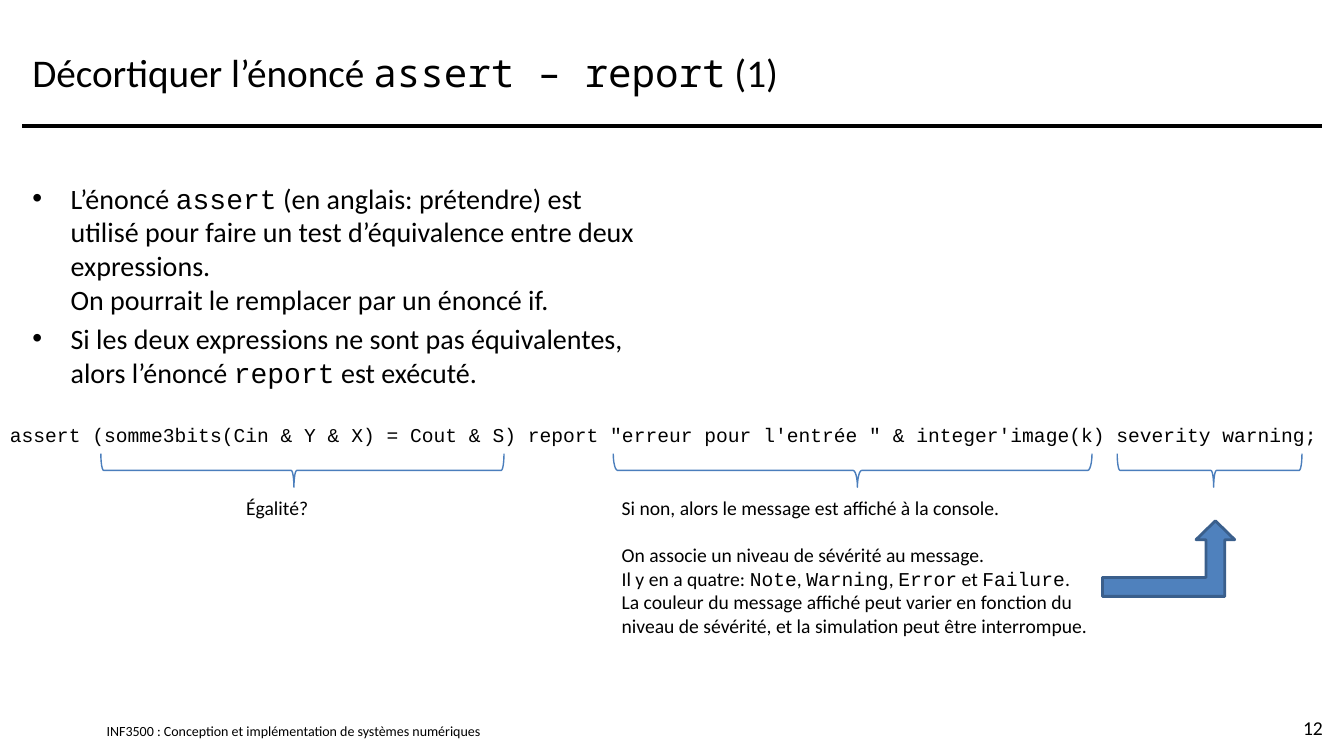
"""Build the slide that explains the VHDL assert – report statement."""
from dataclasses import dataclass

from lxml.etree import SubElement
from pptx import Presentation
from pptx.dml.color import RGBColor
from pptx.enum.shapes import MSO_CONNECTOR, MSO_SHAPE
from pptx.enum.text import MSO_ANCHOR, PP_ALIGN
from pptx.oxml.ns import qn
from pptx.util import Inches, Pt

COLS, ROWS = 160, 90
CELL = Inches(1) // 12
BLACK = RGBColor(0x00, 0x00, 0x00)
BRACE_BLUE = RGBColor(0x4B, 0x7E, 0xBC)
ARROW_FILL = RGBColor(0x4F, 0x81, 0xBD)
ARROW_LINE = RGBColor(0x3A, 0x5F, 0x8C)
SANS, MONO, TITLE_MONO = "Calibri", "Courier New", "Noto Sans Mono"
BRACE_ROW, BRACE_DEPTH = 56, 4


@dataclass(frozen=True)
class Para:
    """A paragraph whose `marked` parts are set in the code font."""
    text: str
    before: float = 0
    bullet: bool = False


@dataclass(frozen=True)
class Block:
    """A text box placed in grid columns and rows."""
    col: float
    row: float
    cols: float
    rows: float
    size: int
    paras: tuple[Para, ...]
    code_font: str = MONO
    align: PP_ALIGN = PP_ALIGN.LEFT
    anchor: MSO_ANCHOR = MSO_ANCHOR.TOP
    inset: bool = True


@dataclass(frozen=True)
class Brace:
    """A brace under the code, from one column to another."""
    start: float
    end: float
    curve: float
    tip: float


BLOCKS = (
    Block(12.7, 86, 61.3, 2, 10,
          (Para("INF3500 : Conception et implémentation de systèmes numériques"),),
          anchor=MSO_ANCHOR.MIDDLE, inset=False),
    Block(2.67, 2, 154.67, 13, 28, (Para("Décortiquer l’énoncé `assert – report` (1)"),),
          code_font=TITLE_MONO, anchor=MSO_ANCHOR.MIDDLE),
    Block(2.67, 21, 76, 61, 20, (
        Para("L’énoncé `assert` (en anglais: prétendre) est utilisé pour faire un test "
             "d’équivalence entre deux expressions.\n"
             "On pourrait le remplacer par un énoncé if.", bullet=True),
        Para("Si les deux expressions ne sont pas équivalentes, alors l’énoncé `report` "
             "est exécuté.", before=4, bullet=True))),
    Block(150.67, 84.25, 8, 4.8, 14, (Para("12"),),
          align=PP_ALIGN.RIGHT, anchor=MSO_ANCHOR.MIDDLE),
    Block(0, 49.7, COLS, 6.8, 14, (
        Para("`assert (somme3bits(Cin & Y & X) = Cout & S) report "
             "\"erreur pour l'entrée \" & integer'image(k) severity warning;`"),)),
    Block(3, 59, 60, 2.9, 14, (Para("Égalité?"),), align=PP_ALIGN.CENTER, inset=False),
    Block(74, 59, 56, 17, 14, (
        Para("Si non, alors le message est affiché à la console."),
        Para("On associe un niveau de sévérité au message.\n"
             "Il y en a quatre: `Note`, `Warning`, `Error` et `Failure`.\n"
             "La couleur du message affiché peut varier en fonction du niveau de sévérité, "
             "et la simulation peut être interrompue.", before=17)), inset=False),
)
BRACES = (
    Brace(12, 60, 0.083, 0.521),
    Brace(73, 130, 0.129, 0.49),
    Brace(133, 155, 0.083, 0.478),
)


def grid(*cells: float) -> list[int]:
    """Convert grid cells to lengths."""
    return [round(n * CELL) for n in cells]


def write_para(p, para: Para, block: Block) -> None:
    """Fill one paragraph with text and code runs."""
    p.alignment = block.align
    p.space_before = Pt(para.before)
    if para.bullet:
        pPr = p._p.get_or_add_pPr()
        indent = Inches(0.38)
        pPr.set("marL", str(indent))
        pPr.set("indent", str(-indent))
        SubElement(pPr, qn("a:buFont"), typeface="Arial")
        SubElement(pPr, qn("a:buChar"), char="•")
    for i, part in enumerate(para.text.split("`")):
        for j, line in enumerate(part.split("\n")):
            if j:
                p.add_line_break()
            if line:
                r = p.add_run()
                r.text = line
                r.font.name = block.code_font if i % 2 else SANS
                r.font.size = Pt(block.size)
                r.font.color.rgb = BLACK
    for br in p._p.findall(qn("a:br")):
        SubElement(br, qn("a:rPr"), sz=str(block.size * 100))


def draw_block(slide, block: Block) -> None:
    """Add a text box."""
    tf = slide.shapes.add_textbox(*grid(block.col, block.row, block.cols, block.rows)).text_frame
    tf.word_wrap = True
    tf.vertical_anchor = block.anchor
    if not block.inset:
        tf.margin_left = tf.margin_right = tf.margin_top = tf.margin_bottom = 0
    for i, para in enumerate(block.paras):
        write_para(tf.add_paragraph() if i else tf.paragraphs[0], para, block)


def draw_brace(slide, brace: Brace) -> None:
    """Add a right brace turned to point downwards."""
    span = brace.end - brace.start
    left = (brace.start + brace.end - BRACE_DEPTH) / 2
    sp = slide.shapes.add_shape(
        MSO_SHAPE.RIGHT_BRACE, *grid(left, BRACE_ROW - span / 2, BRACE_DEPTH, span))
    sp.rotation = 90
    sp.shadow.inherit = False
    sp.adjustments[0], sp.adjustments[1] = brace.curve, brace.tip
    sp.fill.background()
    sp.line.color.rgb = BRACE_BLUE
    sp.line.width = Pt(1)


def draw_rule(slide) -> None:
    """Add the line under the title."""
    rule = slide.shapes.add_connector(MSO_CONNECTOR.STRAIGHT, *grid(2.67, 15, 157.33, 15))
    rule.line.color.rgb = BLACK
    rule.line.width = Pt(3)
    SubElement(rule._element.spPr, qn("a:effectLst"))


def draw_arrow(slide) -> None:
    """Add the bent arrow from the note to the severity brace."""
    sp = slide.shapes.add_shape(MSO_SHAPE.BENT_UP_ARROW, *grid(131.25, 62, 15.75, 9))
    sp.shadow.inherit = False
    for i, value in enumerate((0.25, 0.256, 0.25)):
        sp.adjustments[i] = value
    sp.fill.solid()
    sp.fill.fore_color.rgb = ARROW_FILL
    sp.line.color.rgb = ARROW_LINE
    sp.line.width = Pt(2)


def main() -> None:
    """Build and save the slide."""
    prs = Presentation()
    prs.slide_width, prs.slide_height = grid(COLS, ROWS)
    slide = prs.slides.add_slide(prs.slide_layouts[6])
    draw_rule(slide)
    for block in BLOCKS:
        draw_block(slide, block)
    for brace in BRACES:
        draw_brace(slide, brace)
    draw_arrow(slide)
    prs.save("out.pptx")


if __name__ == "__main__":
    main()
